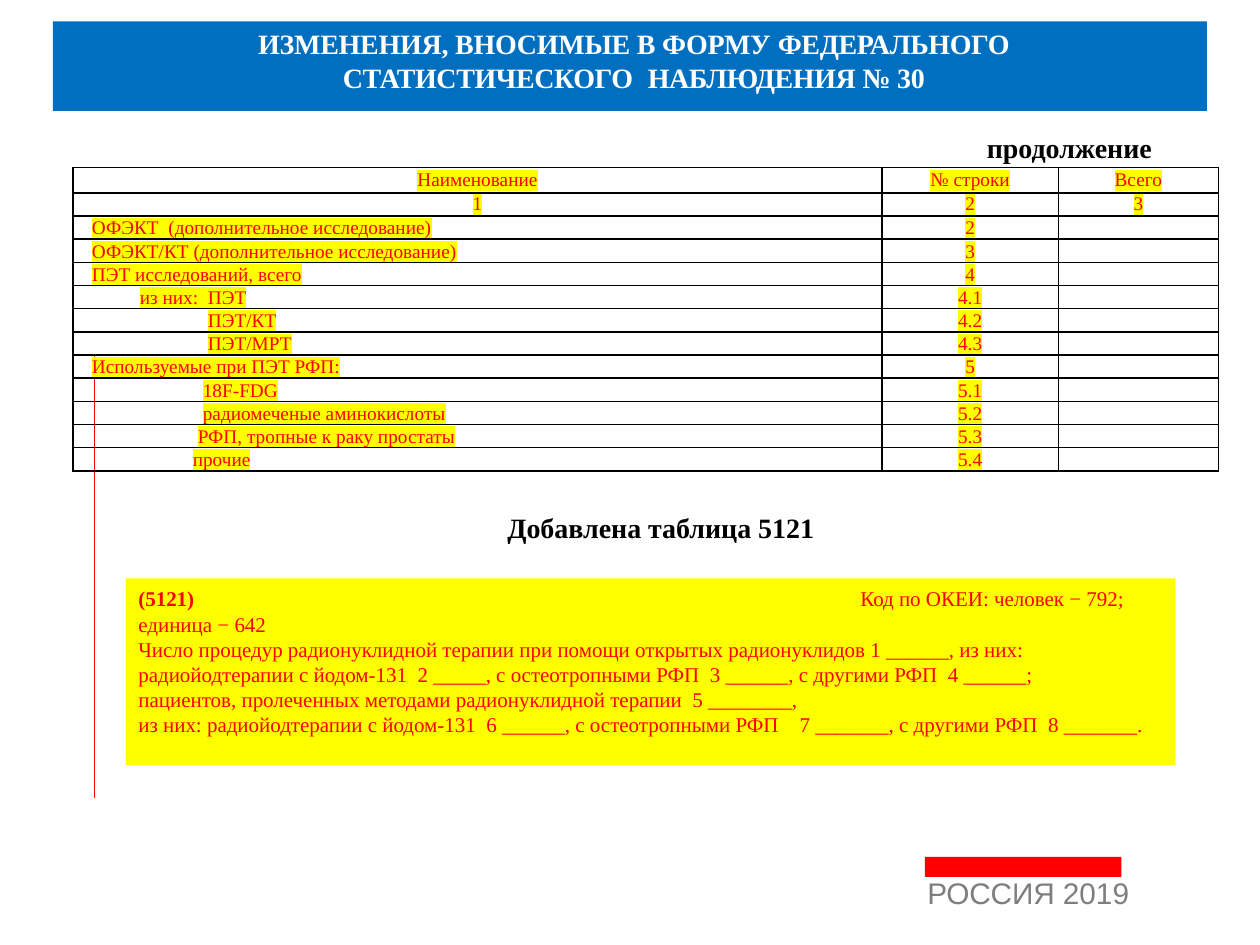
"""Build the slide on changes to federal statistical form No. 30."""
import pptx
import pptx.dml.color
import pptx.enum.shapes
import pptx.enum.text
import pptx.oxml
import pptx.oxml.ns
import pptx.util
from lxml import etree

Inches, Pt = pptx.util.Inches, pptx.util.Pt
ALIGN, ANCHOR = pptx.enum.text.PP_ALIGN, pptx.enum.text.MSO_ANCHOR
SERIF, RED, YELLOW, WHITE, BLACK = "Times New Roman", "FF0000", "FFFF00", "FFFFFF", "000000"

COLUMNS = [6.42, 1.4, 1.27]
HEADER = [("Наименование", "№ строки", "Всего"), ("1", "2", "3")]
STUDIES = [
    (0, "ОФЭКТ  (дополнительное исследование)", "2"),
    (0, "ОФЭКТ/КТ (дополнительное исследование)", "3"),
    (0, "ПЭТ исследований, всего", "4"),
    (0.38, "из них:  ПЭТ", "4.1"),
    (0.92, "ПЭТ/КТ", "4.2"),
    (0.92, "ПЭТ/МРТ", "4.3"),
    (0, "Используемые при ПЭТ РФП:", "5"),
    (0.88, "18F-FDG", "5.1"),
    (0.88, "радиомеченые аминокислоты", "5.2"),
    (0.84, "РФП, тропные к раку простаты", "5.3"),
    (0.8, "прочие", "5.4"),
]
TITLE = [
    [("ИЗМЕНЕНИЯ, ВНОСИМЫЕ В ФОРМУ ", -0.1), ("ФЕДЕРАЛЬНОГО", -0.2)],
    [("СТАТИСТИЧЕСКОГО\tНАБЛЮДЕНИЯ ", -0.2), ("№ 30", -0.1)],
]
THERAPY = [
    [("(5121)", True), ("\tКод по ОКЕИ: человек − 792; единица − 642", False)],
    [("Число процедур радионуклидной терапии при помощи открытых радионуклидов 1 ______, "
      "из них: радиойодтерапии с йодом-131  2 _____, с остеотропными РФП  3 ______, "
      "с другими РФП  4 ______;", False)],
    [("пациентов, пролеченных методами радионуклидной терапии  5 ________,", False)],
    [("из них: радиойодтерапии с йодом-131  6 ______, с остеотропными РФП    7 _______, "
      "с другими РФП  8 _______.", False)],
]


def rgb(value):
    return pptx.dml.color.RGBColor.from_string(value)


def add_xml(parent, tag, **attributes):
    return etree.SubElement(parent, pptx.oxml.ns.qn(tag), attributes)


def add_run(paragraph, text, size, color, font=SERIF, bold=False, spacing=0, highlight=None):
    run = paragraph.add_run()
    run.text = text
    run.font.size, run.font.bold = Pt(size), bold
    run.font.color.rgb = rgb(color)
    properties = run._r.get_or_add_rPr()
    if highlight:
        add_xml(add_xml(properties, "a:highlight"), "a:srgbClr", val=highlight)
    run.font.name = font
    if spacing:
        properties.set("spc", str(round(spacing * 100)))


def add_tab(paragraph, position):
    stops = add_xml(paragraph._p.get_or_add_pPr(), "a:tabLst")
    add_xml(stops, "a:tab", pos=str(Inches(position)), algn="l")


def set_insets(frame, left, top, right, bottom):
    frame.margin_left, frame.margin_top = Inches(left), Inches(top)
    frame.margin_right, frame.margin_bottom = Inches(right), Inches(bottom)


def add_block(slide, box, fill):
    block = slide.shapes.add_shape(pptx.enum.shapes.MSO_SHAPE.RECTANGLE, *map(Inches, box))
    block.shadow.inherit = False
    block.fill.solid()
    block.fill.fore_color.rgb = rgb(fill)
    block.line.fill.background()
    return block


def add_text_frame(slide, box, insets):
    frame = slide.shapes.add_textbox(*map(Inches, box)).text_frame
    frame.word_wrap = True
    set_insets(frame, *insets)
    return frame


def next_paragraph(frame, index, align):
    paragraph = frame.add_paragraph() if index else frame.paragraphs[0]
    paragraph.alignment = align
    return paragraph


def fill_cell(cell, text, align, anchor, indent=0):
    cell.fill.background()
    cell.vertical_anchor = anchor
    set_insets(cell, 0.15 if align == ALIGN.LEFT else 0.05, 0, 0.05, 0)
    paragraph = cell.text_frame.paragraphs[0]
    paragraph.alignment = align
    if indent:
        add_tab(paragraph, indent)
        text = "\t" + text
    if text:
        add_run(paragraph, text, 11, RED, highlight=YELLOW)
    else:
        add_xml(paragraph._p, "a:endParaRPr", sz="1100")
    properties = cell._tc.get_or_add_tcPr()
    for place, side in enumerate("LRTB"):
        border = add_xml(properties, f"a:ln{side}", w=str(Pt(1)))
        add_xml(add_xml(border, "a:solidFill"), "a:srgbClr", val=BLACK)
        properties.insert(place, border)


def add_studies(slide):
    count = len(HEADER) + len(STUDIES)
    box = map(Inches, (0.58, 1.33, sum(COLUMNS), 2.4))
    table = slide.shapes.add_table(count, len(COLUMNS), *box).table
    table.first_row = table.horz_banding = False
    for column, width in zip(table.columns, COLUMNS):
        column.width = Inches(width)
    for index, row in enumerate(table.rows):
        row.height = Inches(2.2 / (count - 1) if index else 0.2)
    for r, labels in enumerate(HEADER):
        for c, label in enumerate(labels):
            fill_cell(table.cell(r, c), label, ALIGN.CENTER, ANCHOR.MIDDLE)
    for r, (indent, study, number) in enumerate(STUDIES, len(HEADER)):
        fill_cell(table.cell(r, 0), study, ALIGN.LEFT, ANCHOR.BOTTOM, indent)
        fill_cell(table.cell(r, 1), number, ALIGN.CENTER, ANCHOR.BOTTOM)
        fill_cell(table.cell(r, 2), "", ALIGN.CENTER, ANCHOR.BOTTOM)


def add_title(slide):
    title = add_text_frame(slide, (0.92, 0.2, 8.32, 1.09), (0, 0.01, 0.1, 0))
    for index, runs in enumerate(TITLE):
        line = next_paragraph(title, index, ALIGN.CENTER)
        if index:
            add_tab(line, 2.42)
        else:
            line.space_before = Pt(0.9)
        for text, spacing in runs:
            add_run(line, text, 16, WHITE, bold=True, spacing=spacing)
    continuation = next_paragraph(title, len(TITLE), ALIGN.RIGHT)
    continuation.space_before = Pt(21)
    add_run(continuation, "продолжение", 16, BLACK, bold=True)


def add_therapy(slide):
    therapy = add_block(slide, (1, 4.59, 8.33, 1.48), YELLOW).text_frame
    therapy.word_wrap = True
    therapy.vertical_anchor = ANCHOR.MIDDLE
    set_insets(therapy, 0.1, 0.05, 0.1, 0.21)
    for index, runs in enumerate(THERAPY):
        line = next_paragraph(therapy, index, ALIGN.LEFT)
        if index == 0:
            add_tab(line, 5.73)
        for text, bold in runs:
            add_run(line, text, 12, RED, bold=bold)


def main():
    deck = pptx.Presentation()
    deck.slide_width, deck.slide_height = Inches(10), Inches(7.5)
    slide = deck.slides.add_slide(deck.slide_layouts[6])

    add_block(slide, (7.34, 6.8, 1.56, 0.16), RED)
    margin_rule = slide.shapes.add_connector(
        pptx.enum.shapes.MSO_CONNECTOR.STRAIGHT, *map(Inches, (0.75, 2.81, 0.75, 6.33)))
    margin_rule.line.color.rgb = rgb(RED)
    margin_rule.line.width = Pt(0.75)
    add_xml(margin_rule._element.spPr, "a:effectLst")
    add_block(slide, (0.42, 0.17, 9.16, 0.71), "006FC0")
    add_title(slide)

    footer = add_text_frame(slide, (7.36, 6.95, 1.64, 0.29), (0, 0, 0, 0)).paragraphs[0]
    footer.line_spacing = Pt(19.9)
    add_run(footer, "РОССИЯ ", 17, "7E7E7E", "Arial", spacing=-0.1)
    add_run(footer, "2019", 17, "7E7E7E", "Arial")

    add_studies(slide)
    add_therapy(slide)
    caption = add_text_frame(slide, (0.83, 4, 8.83, 0.37), (0.1, 0.05, 0.1, 0.05)).paragraphs[0]
    caption.alignment = ALIGN.CENTER
    add_run(caption, "Добавлена таблица 5121", 16, BLACK, bold=True)
    deck.save("out.pptx")


if __name__ == "__main__":
    main()
